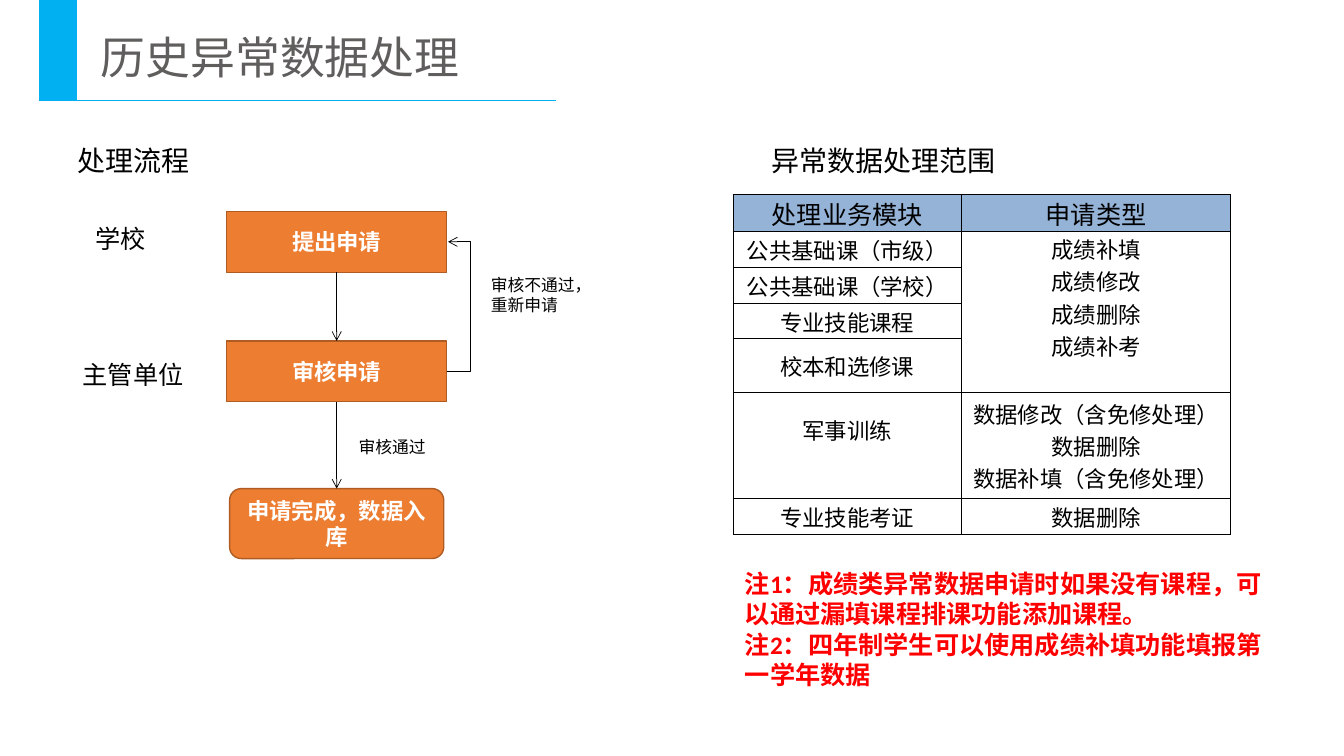
"""Build the slide on handling abnormal historical data."""
import pptx
import pptx.chart.data
import pptx.dml.color
import pptx.enum.shapes
import pptx.enum.text
import pptx.oxml
import pptx.oxml.ns
import pptx.util

Pt = pptx.util.Pt
RGB = pptx.dml.color.RGBColor
SHAPE = pptx.enum.shapes.MSO_SHAPE
LINE = pptx.enum.shapes.MSO_CONNECTOR
ALIGN = pptx.enum.text.PP_ALIGN
ANCHOR = pptx.enum.text.MSO_ANCHOR
qn = pptx.oxml.ns.qn

BLACK = RGB(0, 0, 0)
WHITE = RGB(0xFF, 0xFF, 0xFF)
RED = RGB(0xFF, 0, 0)
GREY = RGB(0x5F, 0x5E, 0x5C)
BLUE = RGB(0, 0xB0, 0xF0)
ORANGE = RGB(0xED, 0x7D, 0x31)
BROWN = RGB(0xAF, 0x5C, 0x24)
HEADER = RGB(0x95, 0xB3, 0xD7)
NOTO, CALIBRI = "Noto Sans CJK SC", "Calibri"

NOTES = ("注1：成绩类异常数据申请时如果没有课程，可以通过漏填课程排课功能添加课程。\n"
         "注2：四年制学生可以使用成绩补填功能填报第一学年数据")
TEXTS = [
    ("历史异常数据处理", (65, 17.5, 496, 46), dict(size=32, color=GREY)),
    ("处理流程", (48, 85, 298, 40), dict(size=20, spacing=38)),
    ("异常数据处理范围", (544, 85, 335, 40), dict(size=20, spacing=38)),
    ("学校", (61, 156, 51, 29), dict(size=18, font=CALIBRI, wrap=False)),
    ("主管单位", (52, 253, 87, 29), dict(size=18, font=CALIBRI, wrap=False)),
    ("审核不通过，\n重新申请", (343.5, 192.5, 87, 37), dict(size=12, wrap=False)),
    ("审核通过", (249, 308.5, 63, 22), dict(size=12, wrap=False)),
    (NOTES, (525, 402.5, 384, 94), dict(size=18, font=CALIBRI, color=RED, bold=True)),
]
STEPS = [
    ("提出申请", SHAPE.RECTANGLE, (162, 151, 157, 43.5)),
    ("审核申请", SHAPE.RECTANGLE, (162, 243.5, 157, 43.5)),
    ("申请完成，数据入库", SHAPE.ROUNDED_RECTANGLE, (164, 349, 153, 50)),
]
RETURN_X = 336
ROWS = [
    (26.5, "处理业务模块", "申请类型"),
    (25.5, "公共基础课（市级）", "成绩补填\n成绩修改\n成绩删除\n成绩补考"),
    (25.5, "公共基础课（学校）", ""),
    (25.5, "专业技能课程", ""),
    (38, "校本和选修课", ""),
    (76, "军事训练", "数据修改（含免修处理）\n数据删除\n数据补填（含免修处理）"),
    (25.5, "专业技能考证", "数据删除"),
]
COLS = (163.5, 192)
TABLE_AT = (523.5, 139)

prs = pptx.Presentation()
prs.slide_width, prs.slide_height = Pt(960), Pt(540)
s = prs.slides.add_slide(prs.slide_layouts[6])


def write(tf, text, size=16, font=NOTO, color=BLACK, bold=False,
          align=ALIGN.LEFT, spacing=None, wrap=True):
    tf.word_wrap = wrap
    for i, line in enumerate(text.split("\n")):
        p = tf.add_paragraph() if i else tf.paragraphs[0]
        p.alignment = align
        if spacing:
            p.line_spacing = Pt(spacing)
        r = p.add_run()
        r.text = line
        r.font.size, r.font.bold, r.font.name = Pt(size), bold, font
        r.font.color.rgb = color
        ea = pptx.oxml.parse_xml(f'<a:ea {pptx.oxml.ns.nsdecls("a")} typeface="{font}"/>')
        r.font._element.find(qn("a:latin")).addnext(ea)


def add_box(kind, box, fill, line=None):
    sp = s.shapes.add_shape(kind, *map(Pt, box))
    sp.shadow.inherit = False
    sp.fill.solid()
    sp.fill.fore_color.rgb = fill
    if line is None:
        sp.line.fill.background()
    else:
        sp.line.color.rgb, sp.line.width = line, Pt(1)
    return sp


def add_line(ends, kind=LINE.STRAIGHT, color=BLACK, arrow=True):
    c = s.shapes.add_connector(kind, *map(Pt, ends))
    c.line.color.rgb, c.line.width = color, Pt(0.5)
    props = c._element.spPr
    if arrow:
        tail = props.find(qn("a:ln")).makeelement(qn("a:tailEnd"), {"type": "arrow"})
        props.find(qn("a:ln")).append(tail)
    props.append(props.makeelement(qn("a:effectLst"), {}))
    return c


def add_borders(cell):
    for side in ("lnL", "lnR", "lnT", "lnB"):
        cell._tc.get_or_add_tcPr().append(pptx.oxml.parse_xml(
            f'<a:{side} {pptx.oxml.ns.nsdecls("a")} w="6350"><a:solidFill>'
            f'<a:srgbClr val="{BLACK}"/></a:solidFill></a:{side}>'))


add_box(SHAPE.RECTANGLE, (28, 0, 27, 71.5), BLUE)
add_line((28, 71.5, 397, 71.5), color=BLUE, arrow=False)

for text, box, fmt in TEXTS:
    tf = s.shapes.add_textbox(*map(Pt, box)).text_frame
    write(tf, text, **{"spacing": 1.2 * fmt["size"], **fmt})

steps = []
for text, kind, box in STEPS:
    sp = add_box(kind, box, ORANGE, BROWN)
    sp.text_frame.vertical_anchor = ANCHOR.MIDDLE
    write(sp.text_frame, text, color=WHITE, bold=True, align=ALIGN.CENTER, spacing=19.2)
    steps.append(sp)
for upper, lower in zip(steps, steps[1:]):
    c = add_line((0, 0, 0, 0))
    c.begin_connect(upper, 2)
    c.end_connect(lower, 0)

(left, top1, width, height), top2 = STEPS[0][2], STEPS[1][2][1]
right = left + width
back = add_line((right, top2 + height / 2, right + 1, top1 + height / 2), LINE.ELBOW)
guides = back._element.spPr.find(qn("a:prstGeom")).get_or_add_avLst()
guides.append(guides.makeelement(
    qn("a:gd"), {"name": "adj1", "fmla": f"val {(RETURN_X - right) * 100000}"}))

heights = [row[0] for row in ROWS]
frame = s.shapes.add_table(len(ROWS), len(COLS), *map(Pt, (*TABLE_AT, sum(COLS), sum(heights))))
table = frame.table
table.first_row = table.horz_banding = False
for col, width in zip(table.columns, COLS):
    col.width = Pt(width)
for i, (height, *texts) in enumerate(ROWS):
    table.rows[i].height = Pt(height)
    for j, text in enumerate(texts):
        cell = table.cell(i, j)
        cell.margin_left = cell.margin_right = cell.margin_top = Pt(0.75)
        cell.margin_bottom = Pt(22 if text == "军事训练" else 0)
        cell.vertical_anchor = ANCHOR.TOP if (i, j) == (1, 1) else ANCHOR.MIDDLE
        add_borders(cell)
        if i:
            cell.fill.background()
        else:
            cell.fill.solid()
            cell.fill.fore_color.rgb = HEADER
        if text:
            write(cell.text_frame, text, size=16 if i else 18, align=ALIGN.CENTER)
table.cell(1, 1).merge(table.cell(4, 1))

prs.save("out.pptx")
